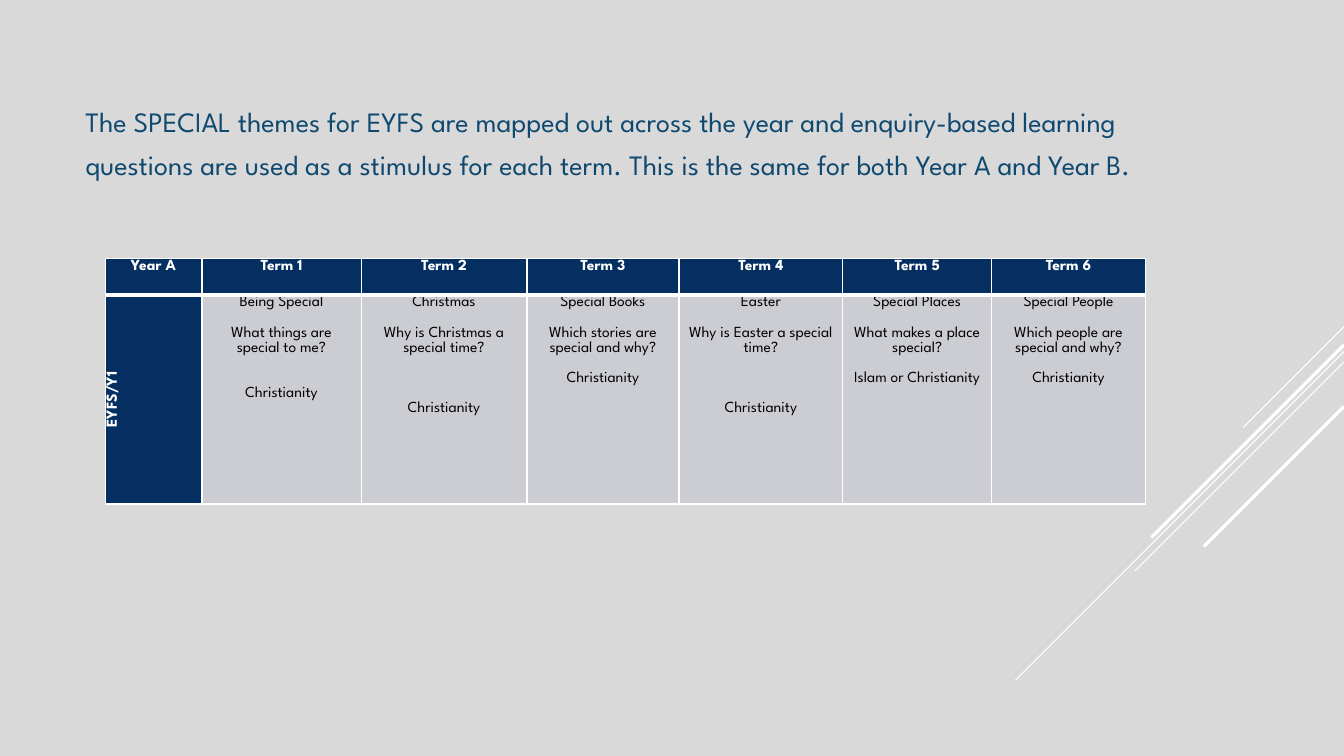
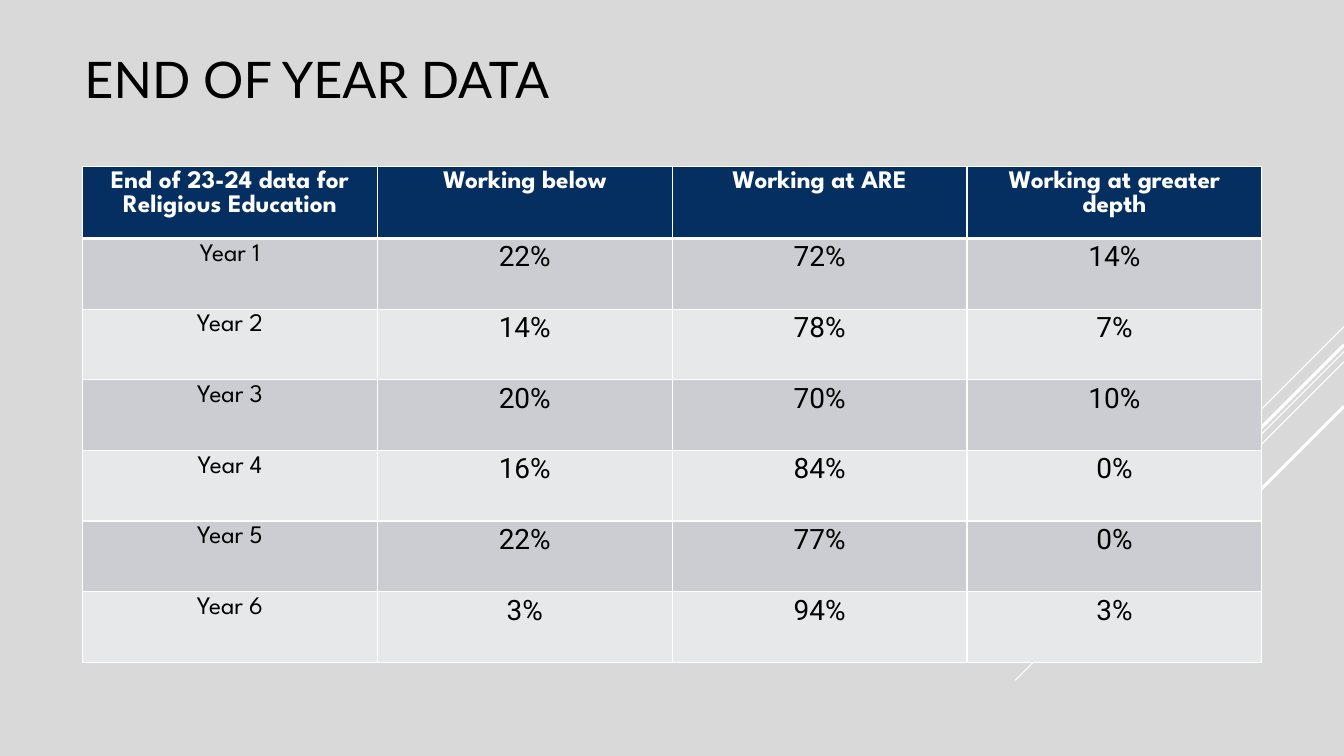
from lxml.etree import SubElement
from pptx import Presentation
from pptx.dml.color import RGBColor
from pptx.enum.shapes import MSO_CONNECTOR
from pptx.enum.text import MSO_ANCHOR, PP_ALIGN
from pptx.oxml import parse_xml
from pptx.oxml.ns import nsdecls, qn
from pptx.util import Cm, Pt

COLORS = {
    "background": "D9D9D9",
    "white": "FFFFFF",
    "black": "000000",
    "navy": "052F61",
    "intro": "0F496F",
    "band_dark": "CCCDD2",
    "band_light": "E7E8EA",
}
BODY_FONT = "League Spartan"
TITLE_FONT = "Lato"
NUMBER_FONT = "Roboto"

INTRO = (
    "The SPECIAL themes for EYFS are mapped out across the year and enquiry-based "
    "learning questions are used as a stimulus for each term. This is the same for "
    "both Year A and Year B."
)
YEAR_LABEL = "Year A"
CLASS_LABEL = "EYFS/Y1"
TERMS = [
    ("Being Special", "What things are special to me?", "Christianity", 2),
    ("Christmas", "Why is Christmas a special time?", "Christianity", 3),
    ("Special Books", "Which stories are special and why?", "Christianity", 1),
    ("Easter", "Why is Easter a special time?", "Christianity", 3),
    ("Special Places", "What makes a place special?", "Islam or Christianity", 1),
    ("Special People", "Which people are special and why?", "Christianity", 1),
]
TERM_WIDTHS = [2.44, 4.01, 4.18, 3.83, 4.13, 3.75, 3.88]
TERM_HEIGHTS = [0.93, 5.26]
TERM_LINE = 10.7

DATA_TITLE = "END OF YEAR DATA"
DATA_HEADER = [
    "End of 23-24 data for Religious Education",
    "Working below",
    "Working at ARE",
    "Working at greater depth",
]
RESULTS = [
    ("Year 1", "22%", "72%", "14%"),
    ("Year 2", "14%", "78%", "7%"),
    ("Year 3", "20%", "70%", "10%"),
    ("Year 4", "16%", "84%", "0%"),
    ("Year 5", "22%", "77%", "0%"),
    ("Year 6", "3%", "94%", "3%"),
]
DATA_WIDTHS = [7.43] * 4
DATA_HEIGHTS = [1.82] + [1.78] * 6

SLIDE_WIDTH = 33.87
SLIDE_HEIGHT = 19.05
STREAKS = [
    (8.23, 2.54, 0.75),
    (8.86, 8.28, 0.75),
    (9.12, 5.27, 0.75),
    (8.69, 4.85, 2.25),
    (10.24, 3.53, 2.25),
]


def rgb(name):
    return RGBColor.from_string(COLORS[name])


def write(frame, texts, size=11, font=BODY_FONT, color="black", bold=False,
          align=PP_ALIGN.LEFT, spacing=None, gaps=()):
    frame.word_wrap = True
    for index, text in enumerate(texts):
        para = frame.paragraphs[0] if index == 0 else frame.add_paragraph()
        para.alignment = align
        para.line_spacing = spacing
        if index < len(gaps):
            para.space_before = Pt(gaps[index])
        span = para.add_run()
        span.text = text
        span.font.size = Pt(size)
        span.font.name = font
        span.font.bold = bold
        span.font.color.rgb = rgb(color)


def add_text_box(page, text, left, top, width, height, anchor=MSO_ANCHOR.TOP, **style):
    box = page.shapes.add_textbox(Cm(left), Cm(top), Cm(width), Cm(height))
    box.text_frame.vertical_anchor = anchor
    write(box.text_frame, [text], **style)


def add_page(deck):
    page = deck.slides.add_slide(deck.slide_layouts[6])
    page.background.fill.solid()
    page.background.fill.fore_color.rgb = rgb("background")
    for top, run, weight in STREAKS:
        line = page.shapes.add_connector(
            MSO_CONNECTOR.STRAIGHT, Cm(SLIDE_WIDTH), Cm(top),
            Cm(SLIDE_WIDTH - run), Cm(top + run))
        line.line.color.rgb = rgb("white")
        line.line.width = Pt(weight)
        SubElement(line._element.spPr, qn("a:effectLst"))
    return page


def set_borders(cell, row):
    weights = {"L": 1, "R": 1, "T": 3 if row == 1 else 1, "B": 3 if row == 0 else 1}
    properties = cell._tc.get_or_add_tcPr()
    for index, (side, weight) in enumerate(weights.items()):
        properties.insert(index, parse_xml(
            f'<a:ln{side} {nsdecls("a")} w="{Pt(weight)}"><a:solidFill>'
            f'<a:srgbClr val="{COLORS["white"]}"/></a:solidFill></a:ln{side}>'))


def add_grid(page, left, top, widths, heights):
    frame = page.shapes.add_table(
        len(heights), len(widths), Cm(left), Cm(top), Cm(sum(widths)), Cm(sum(heights)))
    table = frame.table
    table.horz_banding = False
    for column, width in zip(table.columns, widths):
        column.width = Cm(width)
    for row, height in zip(table.rows, heights):
        row.height = Cm(height)
    return table


def fill_cell(table, row, column, texts, fill, tight=True, **style):
    cell = table.cell(row, column)
    if tight:
        cell.margin_left = cell.margin_right = Cm(0.18)
        cell.margin_top = cell.margin_bottom = 0
    cell.fill.solid()
    cell.fill.fore_color.rgb = rgb(fill)
    set_borders(cell, row)
    write(cell.text_frame, texts, align=PP_ALIGN.CENTER,
          spacing=1.07 if tight else None, **style)
    return cell


def add_themes_page(deck):
    page = add_page(deck)
    add_text_box(page, INTRO, 1.9, 1.9, 28.93, 3.15, anchor=MSO_ANCHOR.MIDDLE,
                 size=20, color="intro", spacing=1.3)
    table = add_grid(page, 2.65, 6.51, TERM_WIDTHS, TERM_HEIGHTS)
    label = {"fill": "navy", "color": "white", "bold": True}
    fill_cell(table, 0, 0, [YEAR_LABEL], **label)
    side = fill_cell(table, 1, 0, [CLASS_LABEL], **label)
    side._tc.get_or_add_tcPr().set("vert", "vert270")
    for column, (theme, question, faith, blank) in enumerate(TERMS, 1):
        fill_cell(table, 0, column, [f"Term {column}"], **label)
        fill_cell(table, 1, column, [theme, question, faith], "band_dark",
                  gaps=(0, TERM_LINE, blank * TERM_LINE))


def add_data_page(deck):
    page = add_page(deck)
    table = add_grid(page, 2.08, 4.19, DATA_WIDTHS, DATA_HEIGHTS)
    for column, heading in enumerate(DATA_HEADER):
        fill_cell(table, 0, column, [heading], "navy", tight=False,
                  size=18, color="white", bold=True)
    for row, (year, *shares) in enumerate(RESULTS, 1):
        band = "band_dark" if row % 2 else "band_light"
        fill_cell(table, row, 0, [year], band, tight=False, size=18)
        for column, share in enumerate(shares, 1):
            fill_cell(table, row, column, [share], band, size=20, font=NUMBER_FONT)
    add_text_box(page, DATA_TITLE, 1.88, 1.09, 13.16, 1.8, size=36, font=TITLE_FONT)


def main():
    deck = Presentation()
    deck.slide_width = Cm(SLIDE_WIDTH)
    deck.slide_height = Cm(SLIDE_HEIGHT)
    add_themes_page(deck)
    add_data_page(deck)
    deck.save("out.pptx")


if __name__ == "__main__":
    main()
